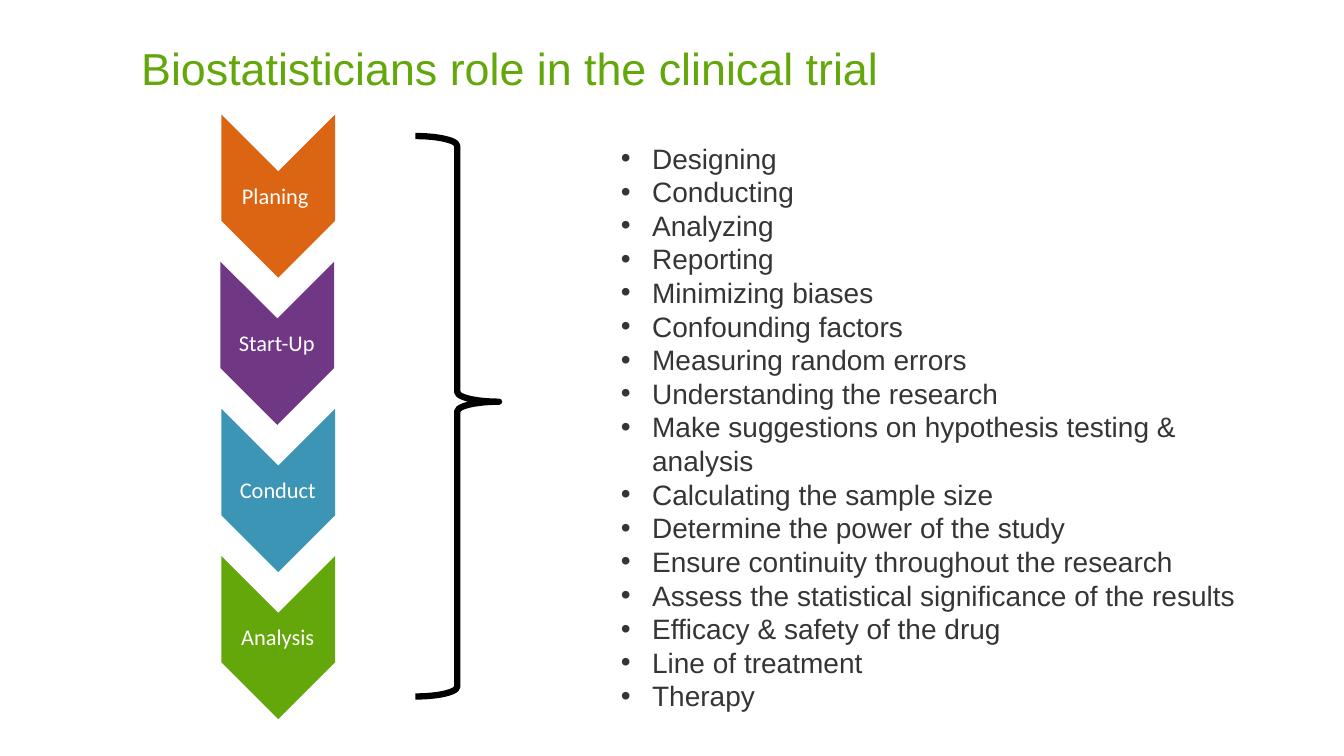
from lxml import etree
from pptx import Presentation
from pptx.dml.color import RGBColor
from pptx.enum.shapes import MSO_SHAPE as Shape
from pptx.enum.text import MSO_ANCHOR as Anchor, MSO_AUTO_SIZE as Fit, PP_ALIGN as Align
from pptx.oxml.ns import qn
from pptx.util import Inches, Pt

ORANGE = RGBColor(0xDC, 0x65, 0x13)
PURPLE = RGBColor(0x6F, 0x37, 0x84)
BLUE = RGBColor(0x3C, 0x95, 0xB4)
GREEN = RGBColor(0x63, 0xA7, 0x0A)
GREY = RGBColor(0x35, 0x35, 0x35)
WHITE = RGBColor(0xFF, 0xFF, 0xFF)
BLACK = RGBColor(0, 0, 0)

# Label, colour, left edge of the chevron before it is turned
PHASES = [
    ("Planing ", ORANGE, 1.95),
    ("Start-Up", PURPLE, 1.94),
    ("Conduct", BLUE, 1.95),
    ("Analysis", GREEN, 1.95),
]
TASKS = [
    "Designing",
    "Conducting",
    "Analyzing",
    "Reporting",
    "Minimizing biases",
    "Confounding factors",
    "Measuring random errors",
    "Understanding the research",
    "Make suggestions on hypothesis testing & analysis",
    "Calculating the sample size",
    "Determine the power of the study",
    "Ensure continuity throughout the research",
    "Assess the statistical significance of the results",
    "Efficacy & safety of the drug",
    "Line of treatment",
    "Therapy",
]
TOP, STEP = 1.38, 1.46


def assign(obj, values):
    for name, value in values.items():
        setattr(obj, name, value)


class Page:
    """Holds the text styles and the slide being built."""

    STYLES = {
        "title": (dict(name="Arial", size=Pt(32)), GREEN),
        "label": (dict(name="Calibri", size=Pt(16)), WHITE),
        "task": (dict(name="Arial", size=Pt(20)), GREY),
    }

    def __init__(self, slide):
        self.slide = slide
        self.shapes = slide.shapes

    def frame(self, box, inset=None, **values):
        """Set wrapping, insets (left, top, right, bottom) and other values."""
        frame = box.text_frame
        assign(frame, dict(word_wrap=True, **values))
        if inset:
            sides = ("left", "top", "right", "bottom")
            assign(frame, {f"margin_{side}": Inches(gap) for side, gap in zip(sides, inset)})
        return frame

    def put(self, para, text, style, **values):
        """Fill a paragraph with text in one of the named styles."""
        para.text = text
        assign(para, values)
        font, color = self.STYLES[style]
        assign(para.font, font)
        para.font.color.rgb = color

    def title(self, text, left, top, width, height):
        box = self.shapes.title
        assign(box, dict(left=Inches(left), top=Inches(top),
                         width=Inches(width), height=Inches(height)))
        frame = self.frame(box, (0, 0.01, 0, 0), auto_size=Fit.NONE,
                           vertical_anchor=Anchor.MIDDLE)
        self.put(frame.paragraphs[0], text, "title", alignment=Align.LEFT)

    def shape(self, kind, left, top, width, height):
        item = self.shapes.add_shape(kind, Inches(left), Inches(top),
                                     Inches(width), Inches(height))
        item.shadow.inherit = False
        return item

    def text(self, left, top, width, height):
        return self.shapes.add_textbox(Inches(left), Inches(top),
                                       Inches(width), Inches(height))

    def phase(self, label, color, left, top):
        arrow = self.shape(Shape.CHEVRON, left, top, 1.62, 1.13)
        arrow.rotation = 90
        arrow.fill.solid()
        arrow.fill.fore_color.rgb = color
        arrow.line.fill.background()
        box = self.text(left + 0.24, top + 0.33, 1.13, 0.49)
        frame = self.frame(box, (0.01,) * 4, vertical_anchor=Anchor.MIDDLE)
        self.put(frame.paragraphs[0], label, "label",
                 alignment=Align.CENTER, line_spacing=0.9)

    def brace(self, left, top, width, height):
        item = self.shape(Shape.RIGHT_BRACE, left, top, width, height)
        item.adjustments[0], item.adjustments[1] = 0.117, 0.474
        item.fill.background()
        item.line.color.rgb = BLACK
        item.line.width = Pt(4.5)

    def bullets(self, items, left, top, width, height):
        frame = self.frame(self.text(left, top, width, height),
                           auto_size=Fit.SHAPE_TO_FIT_TEXT)
        indent = Inches(0.31)
        for i, item in enumerate(items):
            para = frame.add_paragraph() if i else frame.paragraphs[0]
            props = para._p.get_or_add_pPr()
            props.set("marL", str(indent))
            props.set("indent", str(-indent))
            etree.SubElement(props, qn("a:buFont"), typeface="Arial")
            etree.SubElement(props, qn("a:buChar"), char="•")
            self.put(para, item, "task")


def main():
    deck = Presentation()
    assign(deck, dict(slide_width=Inches(13.33), slide_height=Inches(7.5)))
    page = Page(deck.slides.add_slide(deck.slide_layouts.get_by_name("Title Only")))
    page.title("Biostatisticians role in the clinical trial", 1.4, 0.39, 9.6, 0.55)
    for row, (label, color, left) in enumerate(PHASES):
        page.phase(label, color, left, TOP + row * STEP)
    page.bullets(TASKS, 6.06, 1.35, 6.67, 5.79)
    page.brace(4.12, 1.35, 0.83, 5.56)
    deck.save("out.pptx")


if __name__ == "__main__":
    main()
